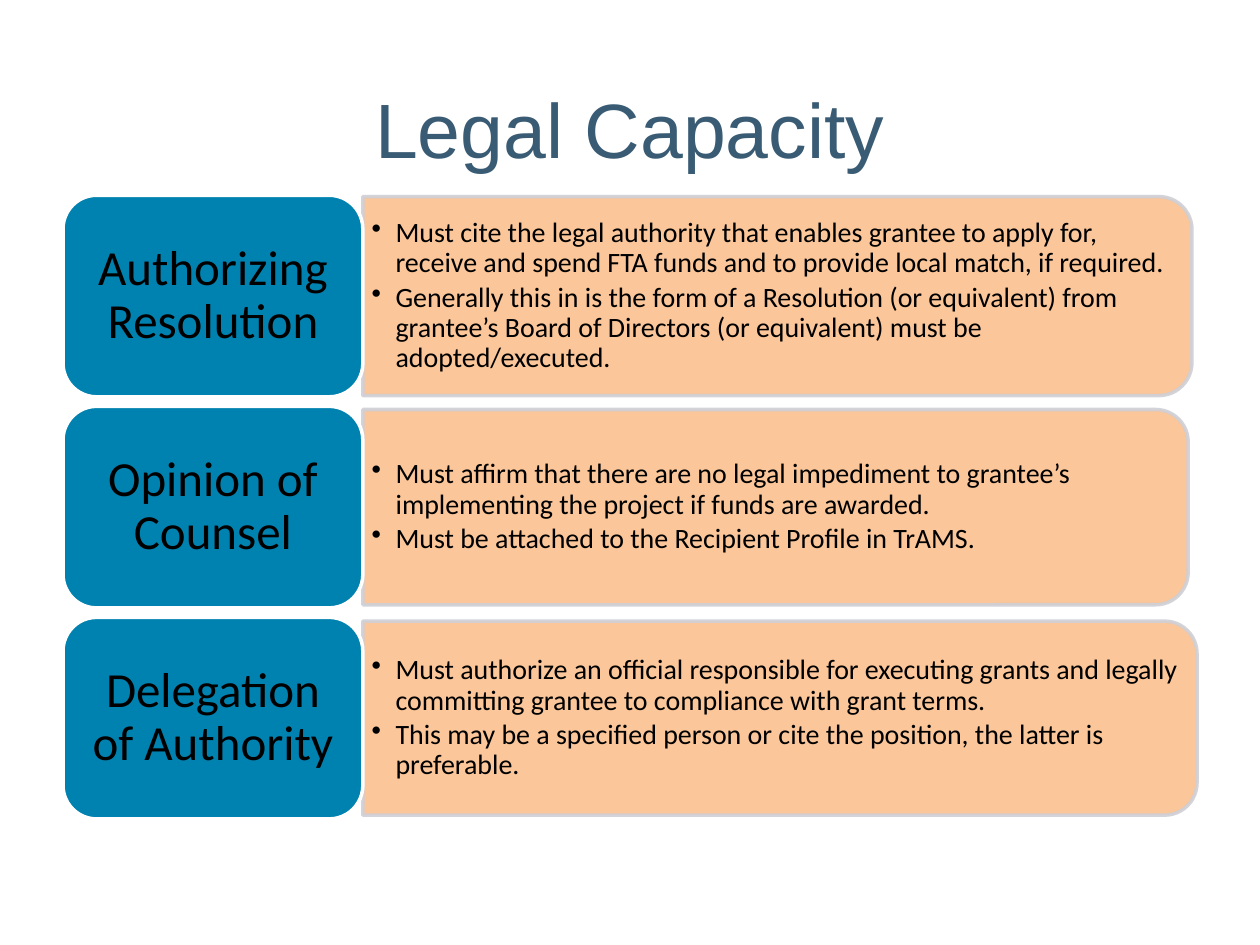
from dataclasses import dataclass

from lxml import etree
from pptx import Presentation
from pptx.dml.color import RGBColor
from pptx.enum.shapes import MSO_SHAPE
from pptx.enum.text import MSO_ANCHOR, PP_ALIGN
from pptx.oxml.ns import qn
from pptx.util import Inches, Pt

ROUNDED = MSO_SHAPE.ROUNDED_RECTANGLE
ROUNDED_TOP = MSO_SHAPE.ROUND_2_SAME_RECTANGLE
MIDDLE = MSO_ANCHOR.MIDDLE
CENTER = PP_ALIGN.CENTER


@dataclass(frozen=True)
class Theme:
    """Colours, fonts and type sizes of the slide."""
    title_color: RGBColor = RGBColor.from_string("395B74")
    text_color: RGBColor = RGBColor.from_string("000000")
    label_fill: RGBColor = RGBColor.from_string("0082B0")
    label_line: RGBColor = RGBColor.from_string("FFFFFF")
    panel_fill: RGBColor = RGBColor.from_string("FAC090")
    panel_line: RGBColor = RGBColor.from_string("CFCFD6")
    panel_opacity: int = 90
    title_font: str = "Arial"
    body_font: str = "Calibri"
    title_size: int = 44
    label_size: int = 28
    bullet_size: int = 16
    line_width: int = 2


@dataclass(frozen=True)
class Grid:
    """Label column, panel column and row rhythm in inches."""
    left: float = 0.5
    label_width: float = 2.38
    label_height: float = 1.6
    first_center: float = 2.35
    pitch: float = 1.675

    @property
    def panel_left(self):
        """Return the left edge of the panel column."""
        return self.left + self.label_width

    def center(self, row):
        """Return the vertical centre of a row."""
        return self.first_center + row * self.pitch


THEME = Theme()
GRID = Grid()
ROWS = [
    ("Authorizing Resolution", 6.58, 1.58, [
        "Must cite the legal authority that enables grantee to apply for, receive and spend "
        "FTA funds and to provide local match, if required.",
        "Generally this in is the form of a Resolution (or equivalent) from grantee’s Board "
        "of Directors (or equivalent) must be adopted/executed.",
    ]),
    ("Opinion of Counsel", 6.55, 1.55, [
        "Must affirm that there are no legal impediment to grantee’s implementing the "
        "project if funds are awarded.",
        "Must be attached to the Recipient Profile in TrAMS.",
    ]),
    ("Delegation of Authority", 6.62, 1.54, [
        "Must authorize an official responsible for executing grants and legally committing "
        "grantee to compliance with grant terms.",
        "This may be a specified person or cite the position, the latter is preferable.",
    ]),
]


def style_font(paragraph, name, size, color):
    """Set the font of a whole paragraph."""
    paragraph.font.name = name
    paragraph.font.size = Pt(size)
    paragraph.font.color.rgb = color


def prepare_frame(frame, side, end):
    """Wrap and centre a text frame vertically, with insets in inches."""
    frame.word_wrap = True
    frame.vertical_anchor = MIDDLE
    frame.margin_left = frame.margin_right = Inches(side)
    frame.margin_top = frame.margin_bottom = Inches(end)


def add_box(slide, preset, center_x, center_y, width, height, fill, line):
    """Add a filled, outlined shape around a centre point."""
    shape = slide.shapes.add_shape(
        preset, Inches(center_x - width / 2), Inches(center_y - height / 2),
        Inches(width), Inches(height))
    shape.shadow.inherit = False
    shape.fill.solid()
    shape.fill.fore_color.rgb = fill
    shape.line.color.rgb = line
    shape.line.width = Pt(THEME.line_width)
    return shape


def set_opacity(shape, percent):
    """Make the fill and line of a shape partly transparent."""
    for color in shape._element.spPr.iter(qn("a:srgbClr")):
        etree.SubElement(color, qn("a:alpha")).set("val", str(percent * 1000))


def add_bullet(paragraph, text):
    """Write one bulleted paragraph with a hanging indent."""
    paragraph.text = text
    paragraph.level = 1
    paragraph.line_spacing = 0.9
    paragraph.space_before = Pt(0)
    paragraph.space_after = Pt(2.4)
    properties = paragraph._p.get_or_add_pPr()
    properties.set("marL", str(Inches(0.19)))
    properties.set("indent", str(-Inches(0.19)))
    etree.SubElement(properties, qn("a:buChar")).set("char", "•")
    style_font(paragraph, THEME.body_font, THEME.bullet_size, THEME.text_color)


def add_panel(slide, row, width, height, bullets):
    """Add a panel rounded on its right side, with its bullets."""
    center_y = GRID.center(row)
    panel = add_box(slide, ROUNDED_TOP, GRID.panel_left + width / 2, center_y,
                    height, width, THEME.panel_fill, THEME.panel_line)
    panel.rotation = 90
    set_opacity(panel, THEME.panel_opacity)

    text_height = height - 0.15
    box = slide.shapes.add_textbox(
        Inches(GRID.panel_left), Inches(center_y - text_height / 2),
        Inches(width - 0.08), Inches(text_height))
    frame = box.text_frame
    prepare_frame(frame, 0.07, 0.03)
    for index, text in enumerate(bullets):
        add_bullet(frame.add_paragraph() if index else frame.paragraphs[0], text)


def add_label(slide, row, text):
    """Add the rounded label of a row."""
    label = add_box(slide, ROUNDED, GRID.left + GRID.label_width / 2, GRID.center(row),
                    GRID.label_width, GRID.label_height, THEME.label_fill, THEME.label_line)
    prepare_frame(label.text_frame, 0.12, 0.06)
    paragraph = label.text_frame.paragraphs[0]
    paragraph.text = text
    paragraph.alignment = CENTER
    paragraph.line_spacing = 0.9
    style_font(paragraph, THEME.body_font, THEME.label_size, THEME.text_color)


def set_title(slide, text):
    """Place and format the title placeholder."""
    title = slide.shapes.title
    title.left, title.top = Inches(0.5), Inches(0.48)
    title.width, title.height = Inches(9), Inches(1.07)
    title.text_frame.vertical_anchor = MIDDLE
    paragraph = title.text_frame.paragraphs[0]
    paragraph.text = text
    paragraph.alignment = CENTER
    style_font(paragraph, THEME.title_font, THEME.title_size, THEME.title_color)


def main():
    """Build the slide and save it."""
    presentation = Presentation()
    presentation.slide_width, presentation.slide_height = Inches(10), Inches(7.5)
    slide = presentation.slides.add_slide(presentation.slide_layouts.get_by_name("Title Only"))
    set_title(slide, "Legal Capacity")
    for row, (label, width, height, bullets) in enumerate(ROWS):
        add_panel(slide, row, width, height, bullets)
        add_label(slide, row, label)
    presentation.save("out.pptx")


if __name__ == "__main__":
    main()
